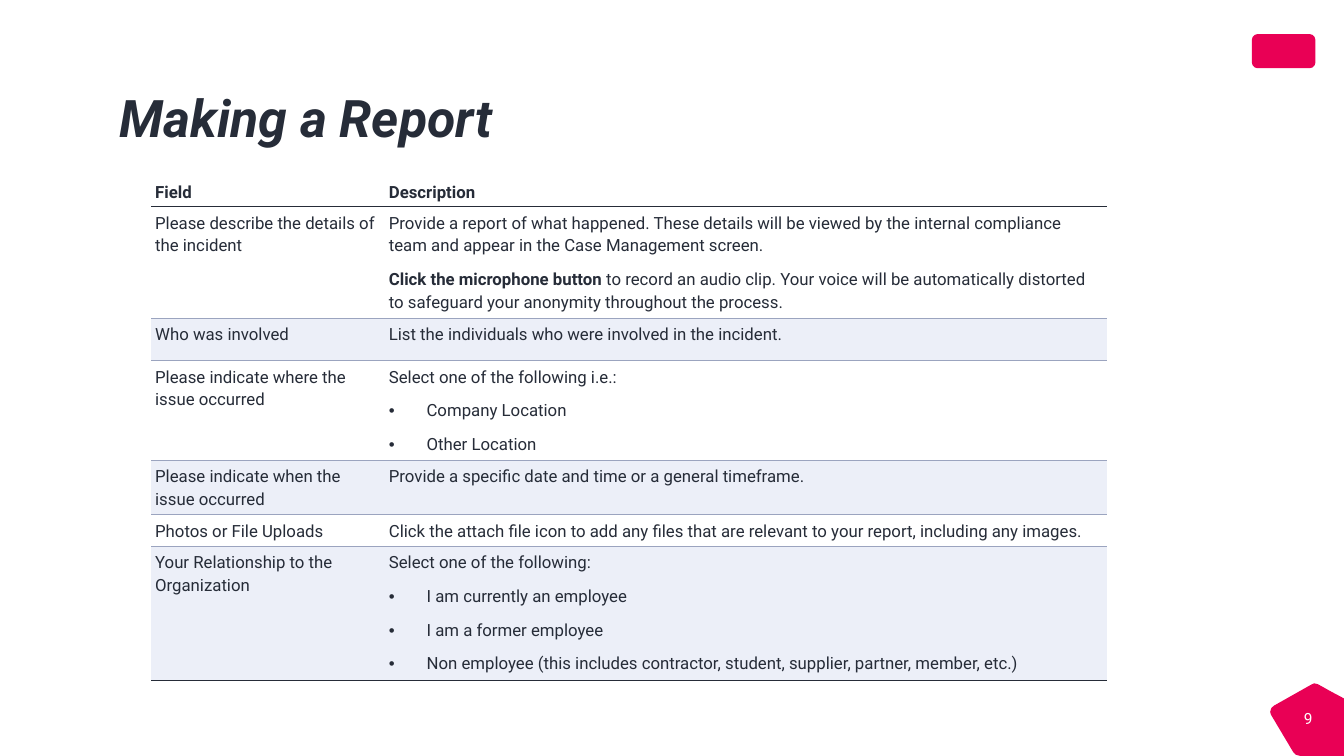
from lxml.etree import SubElement
from pptx import Presentation
from pptx.dml.color import RGBColor
from pptx.enum.shapes import MSO_SHAPE
from pptx.enum.text import MSO_ANCHOR, PP_ALIGN
from pptx.oxml.ns import qn
from pptx.util import Cm, Pt

COLORS = {"ink": "262C38", "accent": "E90055", "band": "ECEFF8", "rule": "9BA4BF", "white": "FFFFFF"}
FONT = "Roboto"
NO_STYLE = "{2D5ABB26-0587-4C30-8999-92F81FD0307C}"
BULLET = "• "
ROWS = [
    (0.77, "Field", ["Description"]),
    (2.76, "Please describe the details of the incident", [
        "Provide a report of what happened. These details will be viewed by the internal compliance "
        "team and appear in the Case Management screen.",
        ("Click the microphone button ",
         "to record an audio clip. Your voice will be automatically distorted "
         "to safeguard your anonymity throughout the process."),
    ]),
    (1.06, "Who was involved", ["List the individuals who were involved in the incident."]),
    (2.5, "Please indicate where the issue occurred", [
        "Select one of the following i.e.:", "• Company Location", "• Other Location",
    ]),
    (1.33, "Please indicate when the issue occurred", [
        "Provide a specific date and time or a general timeframe.",
    ]),
    (0.77, "Photos or File Uploads", [
        "Click the attach file icon to add any files that are relevant to your report, including any images.",
    ]),
    (3.33, "Your Relationship to the Organization", [
        "Select one of the following:",
        "• I am currently an employee",
        "• I am a former employee",
        "• Non employee (this includes contractor, student, supplier, partner, member, etc.)",
    ]),
]
PENTAGON = [
    (3312, 1722), (3321, 1724), (3330, 1729), (3355, 1743), (3387, 1760), (3387, 1905), (3277, 1905),
    (3266, 1902), (3259, 1895), (3203, 1801), (3201, 1794), (3204, 1784), (3211, 1778), (3305, 1725),
]


def style_font(font, size, color, bold=None):
    font.name = FONT
    font.size = Pt(size)
    font.bold = bold
    font.color.rgb = RGBColor.from_string(COLORS[color])


def add_border(cell, side, color, width):
    line = SubElement(cell._tc.get_or_add_tcPr(), qn(f"a:{side}"), w=str(Pt(width)))
    fill = SubElement(line, qn("a:solidFill"))
    SubElement(fill, qn("a:srgbClr"), val=COLORS[color])


presentation = Presentation()
presentation.slide_width = Cm(33.87)
presentation.slide_height = Cm(19.05)
slide = presentation.slides.add_slide(presentation.slide_layouts[6])

badge = slide.shapes.add_shape(MSO_SHAPE.ROUNDED_RECTANGLE, Cm(31.55), Cm(0.86), Cm(1.6), Cm(0.86))
builder = slide.shapes.build_freeform(*PENTAGON[0], scale=Cm(0.01))
builder.add_line_segments(PENTAGON[1:], close=True)
pentagon = builder.convert_to_shape()
for shape in (badge, pentagon):
    shape.shadow.inherit = False
    shape.fill.solid()
    shape.fill.fore_color.rgb = RGBColor.from_string(COLORS["accent"])
    shape.line.fill.background()

page_frame = pentagon.text_frame
page_frame.vertical_anchor = MSO_ANCHOR.BOTTOM
page_frame.margin_left = page_frame.margin_top = 0
page_frame.margin_right = Cm(0.79)
page_frame.margin_bottom = Cm(0.71)
paragraph = page_frame.paragraphs[0]
paragraph.text = "9"
paragraph.alignment = PP_ALIGN.RIGHT
style_font(paragraph.font, 11, "white")

title_frame = slide.shapes.add_textbox(Cm(3.02), Cm(2.18), Cm(27.79), Cm(1.68)).text_frame
title_frame.word_wrap = True
title_frame.vertical_anchor = MSO_ANCHOR.MIDDLE
title_frame.margin_left = title_frame.margin_right = 0
title_frame.margin_top = title_frame.margin_bottom = 0
paragraph = title_frame.paragraphs[0]
paragraph.text = "Making a Report"
paragraph.line_spacing = 0.95
style_font(paragraph.font, 37, "ink", True)
paragraph.font.italic = True

table_frame = slide.shapes.add_table(len(ROWS), 2, Cm(3.81), Cm(4.42), Cm(24.08), Cm(12.52))
table = table_frame.table
table.first_row = table.horz_banding = False
table._tbl.tblPr.find(qn("a:tableStyleId")).text = NO_STYLE
table.columns[0].width = Cm(5.89)
table.columns[1].width = Cm(18.19)

for row_index, (height, field, description) in enumerate(ROWS):
    table.rows[row_index].height = Cm(height)
    is_header = row_index == 0
    for column_index, texts in enumerate(([field], description)):
        cell = table.cell(row_index, column_index)
        cell.margin_left = cell.margin_right = cell.margin_top = cell.margin_bottom = Cm(0.1)
        cell.vertical_anchor = MSO_ANCHOR.MIDDLE if is_header else MSO_ANCHOR.TOP
        if not is_header:
            add_border(cell, "lnT", *(("ink", 1) if row_index == 1 else ("rule", 0.5)))
        add_border(cell, "lnB", *(("ink", 1) if row_index in (0, len(ROWS) - 1) else ("rule", 0.5)))
        if row_index and row_index % 2 == 0:
            cell.fill.solid()
            cell.fill.fore_color.rgb = RGBColor.from_string(COLORS["band"])
        else:
            cell.fill.background()
        for text_index, text in enumerate(texts):
            frame = cell.text_frame
            paragraph = frame.add_paragraph() if text_index else frame.paragraphs[0]
            paragraph.line_spacing = 1.15
            paragraph.space_after = Pt(8)
            if isinstance(text, tuple):
                for part, bold in zip(text, (True, False)):
                    run = paragraph.add_run()
                    run.text = part
                    run.font.bold = bold
            else:
                paragraph.text = text.removeprefix(BULLET)
                if text.startswith(BULLET):
                    properties = paragraph._p.get_or_add_pPr()
                    properties.set("marL", str(Cm(0.95)))
                    properties.set("indent", str(-Cm(0.95)))
                    SubElement(properties, qn("a:buFont"), typeface="Arial")
                    SubElement(properties, qn("a:buChar"), char="•")
            style_font(paragraph.font, 12, "ink", is_header)

presentation.save("out.pptx")
